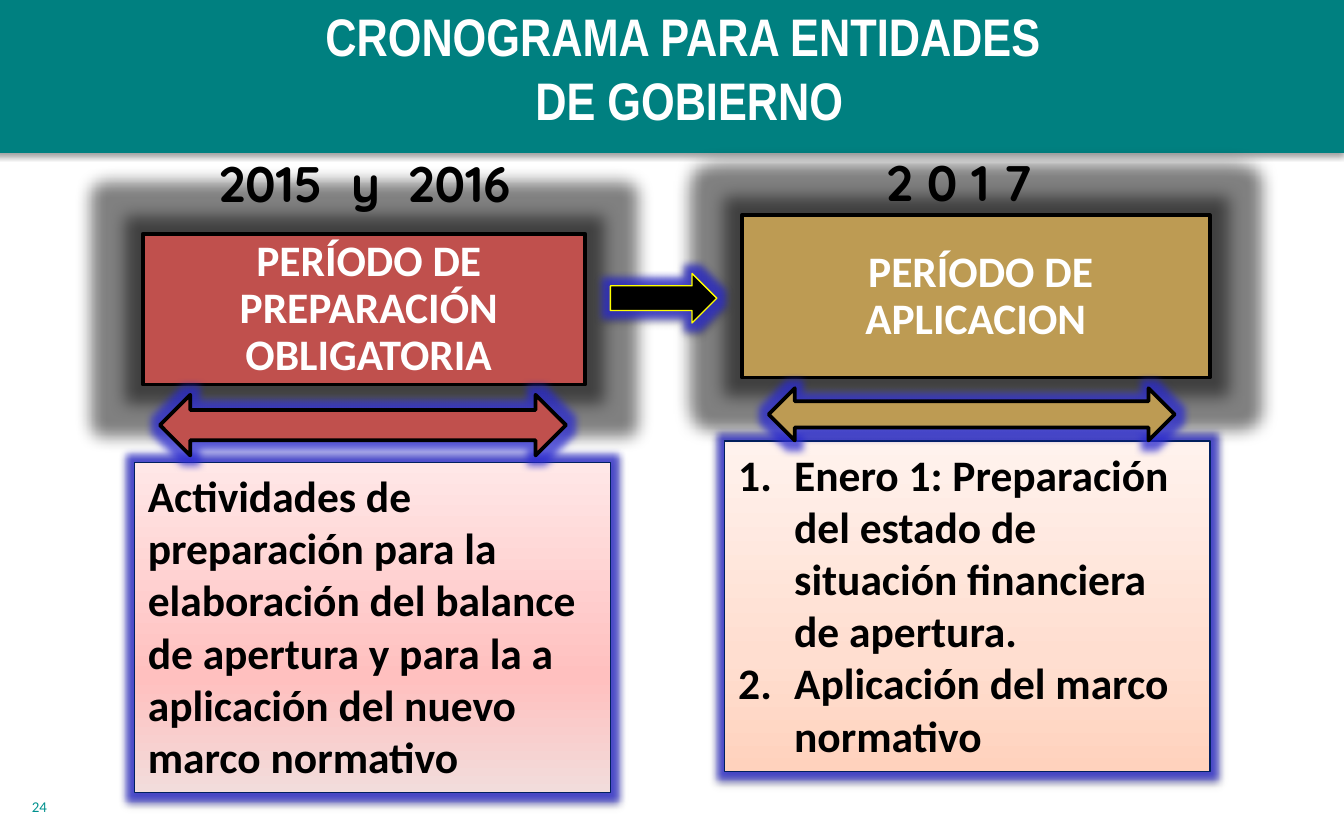
from dataclasses import dataclass
from typing import Optional

from lxml.etree import SubElement
from pptx import Presentation
from pptx.dml.color import RGBColor
from pptx.enum.shapes import MSO_SHAPE as Preset
from pptx.enum.text import MSO_ANCHOR as Anchor, MSO_AUTO_SIZE as AutoSize, PP_ALIGN as Align
from pptx.oxml.ns import qn
from pptx.util import Pt

COLORS = {
    "teal": "008080", "number": "00918E", "white": "FFFFFF", "black": "000000",
    "red": "C0504D", "gold": "BD9B53", "navy": "002060", "yellow": "FFFF00",
    "glow": "2A2AD0",
}
GRADIENTS = {
    "pink": {0: "F2DCDB", 35: "FFC0BF", 100: "FFE7E7"},
    "peach": {0: "FFD2BD", 35: "FFDED0", 100: "FFF2ED"},
}


@dataclass
class Box:
    left: float
    top: float
    width: float
    height: float

    def lengths(self) -> tuple:
        return Pt(self.left), Pt(self.top), Pt(self.width), Pt(self.height)


@dataclass
class Glow:
    color: str
    radius: float
    alpha: int


@dataclass
class Phase:
    years: str
    years_box: Box
    period: str
    period_box: Box
    span_box: Box
    color: str
    tasks: list
    tasks_box: Box
    gradient: str
    numbered: bool


@dataclass
class TextStyle:
    font: str
    size: float
    color: str
    bold: bool = True


BLUE_GLOW = Glow("glow", 8, 75)
DARK_GLOW = Glow("black", 18, 50)
TITLE = TextStyle("Arial Narrow", 28.3, "white")
YEARS = TextStyle("Quicksand", 26.7, "black")
PERIOD = TextStyle("Calibri", 23.3, "white")
TASKS = TextStyle("Calibri", 23.3, "black")
NUMBER = TextStyle("Calibri", 8, "number", False)

PHASES = [
    Phase("2015  y  2016", Box(105, 78.5, 181, 39.5),
          "PERÍODO DE PREPARACIÓN OBLIGATORIA", Box(76.5, 125.3, 237, 80.7),
          Box(85.7, 211.5, 217.5, 32.5), "red",
          ["Actividades de preparación para la elaboración del balance de apertura "
           "y para la a aplicación del nuevo marco normativo"],
          Box(72, 247.7, 255, 177), "pink", False),
    Phase("2 0 1 7", Box(459.5, 77.8, 108.7, 39.5),
          "PERÍODO DE APLICACION ", Box(397.5, 115.3, 250.7, 87),
          Box(411.8, 208, 217.5, 28), "gold",
          ["Enero 1: Preparación del estado de situación financiera de apertura.",
           "Aplicación del marco normativo"],
          Box(388.3, 236.2, 260, 177), "peach", True),
]


def rgb(name: str) -> RGBColor:
    return RGBColor.from_string(COLORS[name])


def add_effects(shape, glow: Optional[Glow] = None, shadow: bool = False) -> None:
    shape.shadow.inherit = False
    effects = shape._element.spPr.find(qn("a:effectLst"))
    parts = []
    if glow:
        parts.append(("a:glow", {"rad": Pt(glow.radius)}, glow.color, glow.alpha))
    if shadow:
        parts.append(("a:outerShdw", {"blurRad": Pt(3.1), "dist": Pt(1.6), "dir": 5400000,
                                      "rotWithShape": 0}, "black", 38))
    for tag, values, color, alpha in parts:
        effect = SubElement(effects, qn(tag), {key: str(int(v)) for key, v in values.items()})
        tint = SubElement(effect, qn("a:srgbClr"), val=COLORS[color])
        SubElement(tint, qn("a:alpha"), val=str(alpha * 1000))


def outline(shape, color: str, width: float) -> None:
    shape.line.color.rgb = rgb(color)
    shape.line.width = Pt(width)


def fill_gradient(shape, stops: dict) -> None:
    shape.fill.gradient()
    shape.fill.gradient_angle = 90
    stop_list = shape._element.spPr.find(qn("a:gradFill")).find(qn("a:gsLst"))
    for stop in list(stop_list):
        stop_list.remove(stop)
    for position, color in stops.items():
        stop = SubElement(stop_list, qn("a:gs"), pos=str(position * 1000))
        SubElement(stop, qn("a:srgbClr"), val=color)


def add_preset(slide, preset, box: Box, color: str):
    shape = slide.shapes.add_shape(preset, *box.lengths())
    shape.fill.solid()
    shape.fill.fore_color.rgb = rgb(color)
    shape.line.fill.background()
    return shape


def place(shape, box: Box) -> None:
    for side, length in zip(("left", "top", "width", "height"), box.lengths()):
        setattr(shape, side, length)


def write(shape, lines: list, style: TextStyle, align=Align.LEFT, spacing: float = 1.0,
          bullet: Optional[str] = None, indent: float = 0, **frame_format) -> None:
    frame = shape.text_frame
    frame_values = {"word_wrap": True, "auto_size": AutoSize.NONE,
                    "vertical_anchor": Anchor.TOP, **frame_format}
    for key, value in frame_values.items():
        setattr(frame, key, value)
    for index, line in enumerate(lines):
        paragraph = frame.paragraphs[0] if index == 0 else frame.add_paragraph()
        run = paragraph.add_run()
        run.text = line
        properties = paragraph._p.get_or_add_pPr()
        properties.set("marL", str(int(Pt(indent))))
        properties.set("indent", str(-int(Pt(indent))))
        if bullet:
            SubElement(properties, qn("a:buFont"), typeface="+mj-lt")
            SubElement(properties, qn("a:buAutoNum"), type=bullet)
        else:
            SubElement(properties, qn("a:buNone"))
        for key, value in {"alignment": align, "line_spacing": spacing,
                           "space_before": Pt(0), "space_after": Pt(0)}.items():
            setattr(paragraph, key, value)
        for key, value in {"name": style.font, "size": Pt(style.size),
                           "bold": style.bold}.items():
            setattr(run.font, key, value)
        run.font.color.rgb = rgb(style.color)


def draw_phase(slide, phase: Phase, tasks) -> None:
    # Period box
    period = add_preset(slide, Preset.RECTANGLE, phase.period_box, phase.color)
    outline(period, "black", 2)
    add_effects(period, DARK_GLOW)
    write(period, [phase.period], PERIOD, Align.CENTER, 0.9, vertical_anchor=Anchor.MIDDLE,
          margin_left=Pt(36.7), margin_right=Pt(31.7), margin_top=Pt(3), margin_bottom=Pt(3))
    # Years above it
    years = slide.shapes.add_textbox(*phase.years_box.lengths())
    write(years, [phase.years], YEARS, Align.CENTER)
    # Tasks below it
    place(tasks, phase.tasks_box)
    fill_gradient(tasks, GRADIENTS[phase.gradient])
    outline(tasks, "navy", 0.75)
    add_effects(tasks, BLUE_GLOW, shadow=True)
    numbering = {"bullet": "arabicPeriod", "indent": 30} if phase.numbered else {}
    write(tasks, phase.tasks, TASKS, **numbering)
    # Span arrow
    span = add_preset(slide, Preset.LEFT_RIGHT_ARROW, phase.span_box, phase.color)
    outline(span, "black", 2)
    add_effects(span, BLUE_GLOW)


def main() -> None:
    prs = Presentation()
    prs.slide_width, prs.slide_height = Pt(720), Pt(450)
    slide = prs.slides.add_slide(prs.slide_layouts[3])
    title, *task_lists = slide.placeholders

    # Header band, behind the title
    band = add_preset(slide, Preset.RECTANGLE, Box(-3, -1.5, 723, 83.5), "teal")
    add_effects(band, shadow=True)
    slide.shapes._spTree.insert(2, band._element)
    place(title, Box(90.7, -1.5, 557.3, 75.5))
    write(title, ["CRONOGRAMA PARA ENTIDADES ", "DE GOBIERNO"], TITLE, Align.CENTER)

    for phase, tasks in zip(PHASES, task_lists):
        draw_phase(slide, phase, tasks)

    # Arrow from preparation to application
    step = add_preset(slide, Preset.RIGHT_ARROW, Box(327, 146.5, 57, 26.5), "black")
    outline(step, "yellow", 0.75)
    add_effects(step, BLUE_GLOW, shadow=True)

    # Page number
    page = slide.shapes.add_textbox(*Box(10, 424, 150, 21.5).lengths())
    write(page, ["24"], NUMBER)

    prs.save("out.pptx")


if __name__ == "__main__":
    main()
